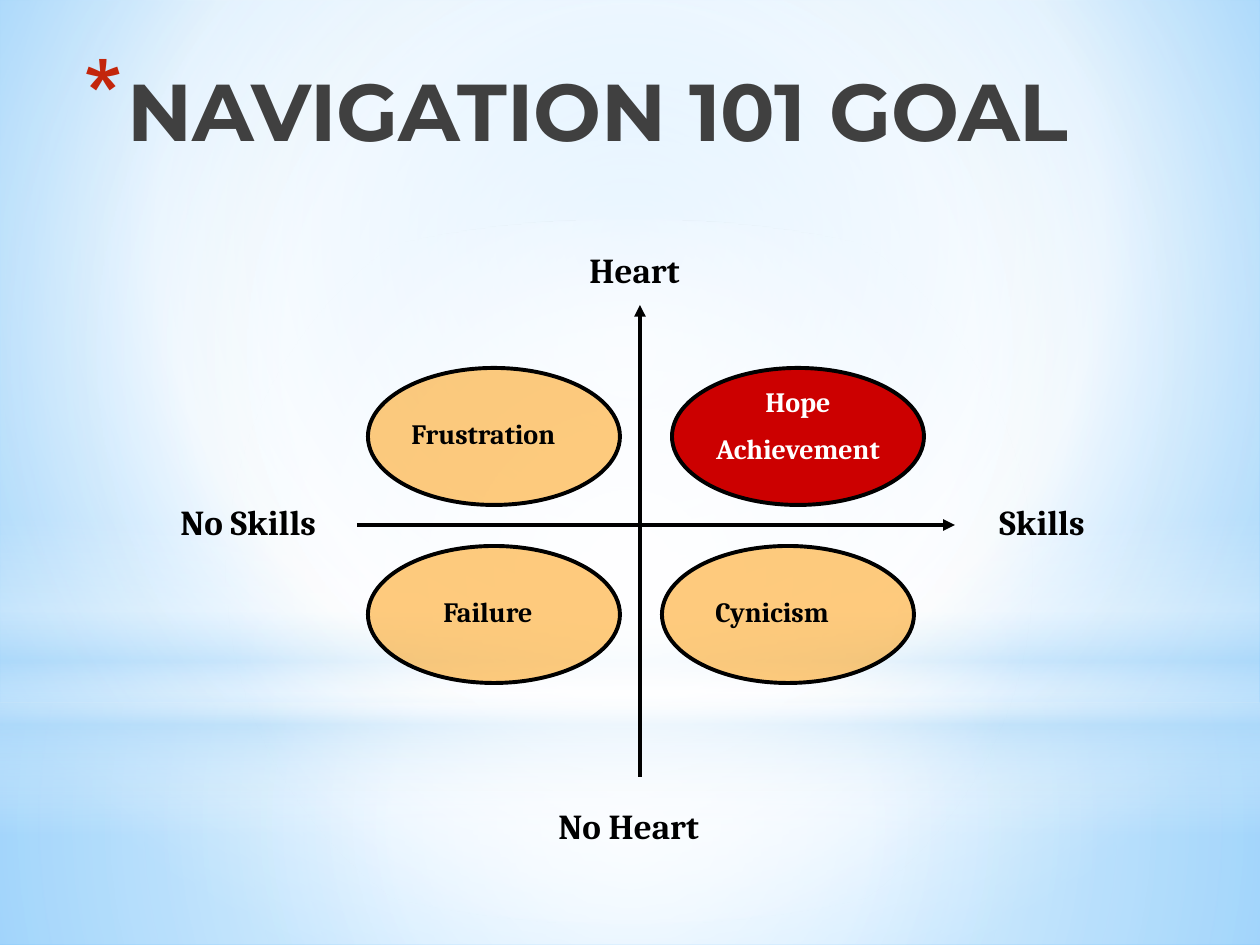
from pptx import Presentation
from pptx.dml.color import RGBColor
from pptx.enum.shapes import MSO_CONNECTOR, MSO_SHAPE
from pptx.enum.text import MSO_AUTO_SIZE, PP_ALIGN
from pptx.oxml import parse_xml
from pptx.oxml.ns import nsdecls, qn
from pptx.util import Pt

PX = 914400 / 126
WIDTH, HEIGHT = 1260, 945
COLORS = {"black": "000000", "white": "FFFFFF", "title": "404040", "star": "C3260C",
          "orange": "FF9900", "red": "CC0000", "mist": "B4DCFA",
          "sky": "9ED5FF", "deep": "5BB9FF"}
CENTRE = (50, 50, 50, 50)

# Gradient stops: position %, colour, opacity %
BACKDROP = [(0, "sky", 100), (60, "white", 100), (100, "deep", 100)]
# Shape, top, height, stops, focus (None for a vertical gradient)
GLOWS = [
    (MSO_SHAPE.RECTANGLE, 703, 242,
     [(0, "white", 91), (37, "white", 76), (100, "mist", 79)], CENTRE),
    (MSO_SHAPE.RECTANGLE, 0, 703,
     [(0, "white", 89), (48, "white", 62), (100, "mist", 79)], CENTRE),
    (MSO_SHAPE.RECTANGLE, 519, 315,
     [(0, "white", 0), (29, "white", 30), (45, "mist", 40),
      (55, "white", 26), (65, "mist", 60), (100, "white", 0)], None),
    (MSO_SHAPE.OVAL, 220, 703, [(0, "white", 100), (56, "white", 0)], CENTRE),
]
TITLE = ("NAVIGATION 101 GOAL", (10, 55, 1071, 158))
AXES = [(640, 777, 640, 305), (357, 525, 955, 525)]
AXIS_LABELS = [("Heart", (577, 242, 136, 54)), ("No Heart", (546, 798, 189, 54)),
               ("No Skills", (168, 494, 178, 54)), ("Skills", (987, 494, 136, 54))]
OVAL_SIZE = (252, 137)
# Text, oval corner, fill, opacity %, text box, text colour, alignment
QUADRANTS = [
    ("Frustration", (368, 368), "orange", 51, (399, 410, 179, 47), "black", PP_ALIGN.LEFT),
    ("Hope\nAchievement", (672, 368), "red", 100, (693, 378, 210, 97), "white",
     PP_ALIGN.CENTER),
    ("Failure", (368, 546), "orange", 51, (431, 588, 126, 47), "black", PP_ALIGN.LEFT),
    ("Cynicism", (662, 546), "orange", 51, (703, 588, 179, 47), "black", PP_ALIGN.LEFT),
]


def emu(*lengths):
    return [round(length * PX) for length in lengths]


def rgb(name):
    return RGBColor.from_string(COLORS[name])


def gradient(stops, focus):
    stop_xml = "".join(
        f'<a:gs pos="{place * 1000}"><a:srgbClr val="{COLORS[color]}">'
        f'<a:alpha val="{opacity * 1000}"/></a:srgbClr></a:gs>'
        for place, color, opacity in stops)
    if focus:
        sides = " ".join(f'{side}="{value * 1000}"' for side, value in zip("ltrb", focus))
        shade = f'<a:path path="circle"><a:fillToRect {sides}/></a:path>'
    else:
        shade = '<a:lin ang="5400000" scaled="0"/>'
    return parse_xml(f'<a:gradFill {nsdecls("a")} rotWithShape="1">'
                     f'<a:gsLst>{stop_xml}</a:gsLst>{shade}</a:gradFill>')


def fill_gradient(owner, fill, stops, focus):
    """Swap the owner's first solid fill for a gradient."""
    fill.solid()
    solid = owner.element.find(".//" + qn("a:solidFill"))
    solid.getparent().replace(solid, gradient(stops, focus))


def add_shape(page, kind, frame):
    shape = page.shapes.add_shape(kind, *emu(*frame))
    shape.shadow.inherit = False
    return shape


def add_text(page, text, frame, size, color, align=PP_ALIGN.LEFT, font="Cambria"):
    box = page.shapes.add_textbox(*emu(*frame))
    body = box.text_frame
    body.word_wrap = True
    body.auto_size = MSO_AUTO_SIZE.SHAPE_TO_FIT_TEXT
    body.text = text
    for index, para in enumerate(body.paragraphs):
        para.alignment = align
        if index:
            para.space_before = Pt(size / 2)
        for span in para.runs:
            span.font.name = font
            span.font.size = Pt(size)
            span.font.bold = True
            span.font.color.rgb = rgb(color)
    return box


def add_title(page):
    text, frame = TITLE
    box = add_text(page, text, frame, 46, "title", PP_ALIGN.RIGHT, "Montserrat")
    box.text_frame.auto_size = MSO_AUTO_SIZE.NONE
    props = box.text_frame.paragraphs[0]._p.get_or_add_pPr()
    indent = emu(44)[0]
    props.set("marL", str(indent))
    props.set("indent", str(-indent))
    for bullet in (f'<a:buClr {nsdecls("a")}><a:srgbClr val="{COLORS["star"]}"/></a:buClr>',
                   f'<a:buSzPct {nsdecls("a")} val="128000"/>',
                   f'<a:buChar {nsdecls("a")} char="*"/>'):
        props.append(parse_xml(bullet))


def add_axis(page, ends):
    axis = page.shapes.add_connector(MSO_CONNECTOR.STRAIGHT, *emu(*ends))
    axis.line.color.rgb = rgb("black")
    axis.line.width = Pt(2.25)
    axis.line._get_or_add_ln().append(
        parse_xml(f'<a:tailEnd {nsdecls("a")} type="triangle"/>'))
    axis.element.spPr.append(parse_xml(f'<a:effectLst {nsdecls("a")}/>'))


def add_oval(page, corner, color, opacity):
    oval = add_shape(page, MSO_SHAPE.OVAL, corner + OVAL_SIZE)
    oval.fill.solid()
    oval.fill.fore_color.rgb = rgb(color)
    if opacity < 100:
        oval.element.spPr.find(qn("a:solidFill"))[0].append(
            parse_xml(f'<a:alpha {nsdecls("a")} val="{opacity * 1000}"/>'))
    oval.line.color.rgb = rgb("black")
    oval.line.width = Pt(2.25)


def main():
    deck = Presentation()
    deck.slide_width, deck.slide_height = emu(WIDTH, HEIGHT)
    page = deck.slides.add_slide(deck.slide_layouts[6])

    fill_gradient(page, page.background.fill, BACKDROP, (20, 10, 20, 60))
    for kind, top, height, stops, focus in GLOWS:
        glow = add_shape(page, kind, (0, top, WIDTH, height))
        fill_gradient(glow, glow.fill, stops, focus)
        glow.line.fill.background()

    add_title(page)
    for ends in AXES:
        add_axis(page, ends)
    for text, frame in AXIS_LABELS:
        add_text(page, text, frame, 20, "black")
    for _, corner, fill, opacity, *_ in QUADRANTS:
        add_oval(page, corner, fill, opacity)
    for text, _, _, _, frame, color, align in QUADRANTS:
        add_text(page, text, frame, 16, color, align)

    deck.save("out.pptx")


if __name__ == "__main__":
    main()
